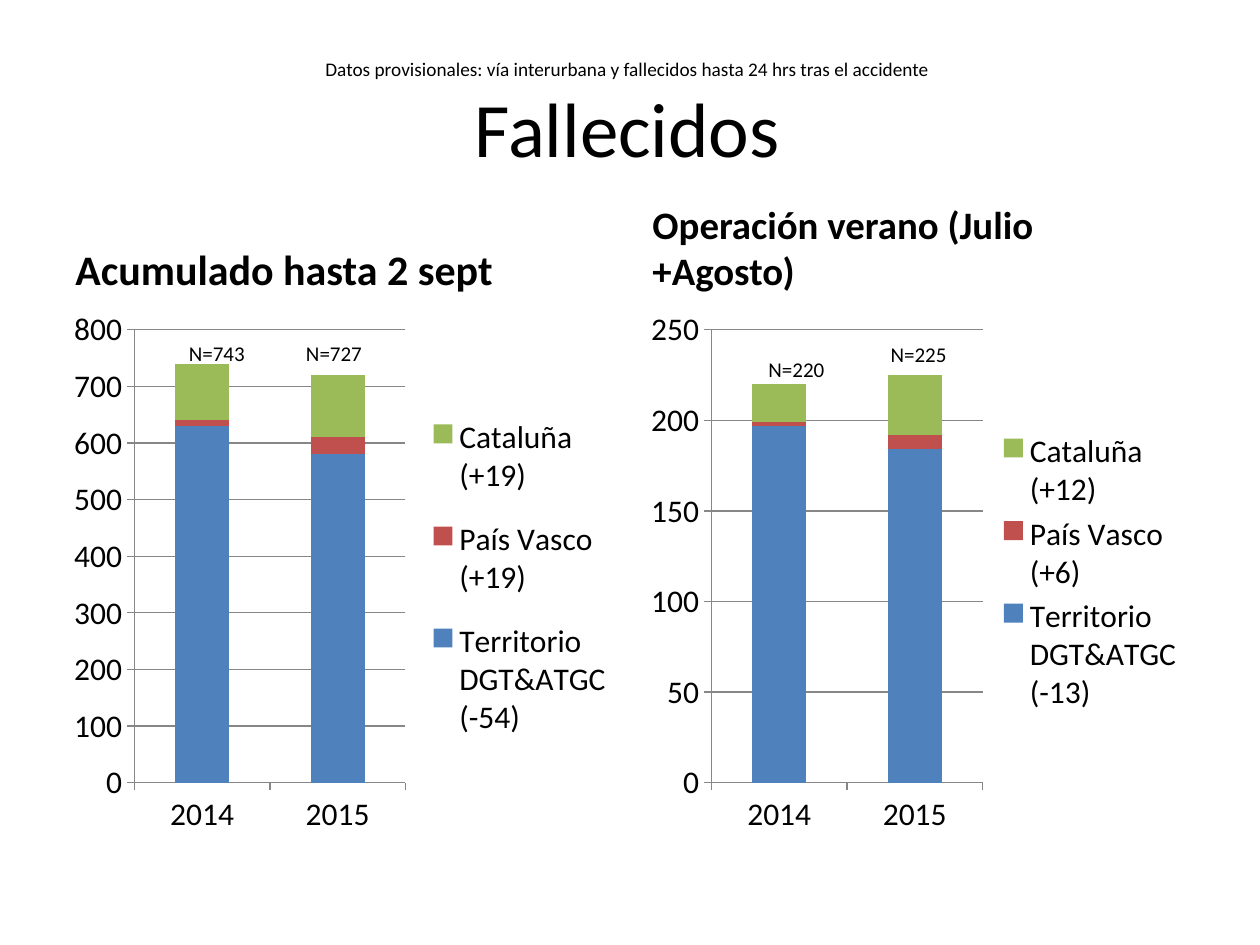
from lxml import etree
from pptx import Presentation
from pptx.chart.data import CategoryChartData
from pptx.dml.color import RGBColor
from pptx.enum.chart import XL_CHART_TYPE, XL_LEGEND_POSITION, XL_TICK_MARK
from pptx.enum.text import MSO_ANCHOR, PP_ALIGN
from pptx.oxml.ns import qn
from pptx.util import Inches, Pt

FONT = "Calibri"
BLACK = "000000"
GRID_GRAY = "878787"
SERIES_COLORS = ["4F81BD", "C0504D", "9BBB59"]
YEARS = ["2014", "2015"]
SUBTITLE = "Datos provisionales: vía interurbana y fallecidos hasta 24 hrs tras el accidente"
TITLE = "Fallecidos"
PANELS = [
    {
        "left": 0.5,
        "heading": "Acumulado hasta 2 sept",
        "heading_size": 24,
        "maximum": 800,
        "step": 100,
        "series": [
            ("Territorio DGT&ATGC (-54)", (630, 580)),
            ("País Vasco (+19)", (10, 30)),
            ("Cataluña (+19)", (100, 110)),
        ],
        "totals": [("N=743", 1.4, 2.65, 0.85, True), ("N=727", 2.33, 2.65, 0.65, False)],
        "legend_layout": {"x": 0.65, "y": 0.17, "w": 0.34, "h": 0.68},
    },
    {
        "left": 5.08,
        "heading": "Operación verano (Julio +Agosto)",
        "heading_size": 22.2,
        "maximum": 250,
        "step": 50,
        "series": [
            ("Territorio DGT&ATGC (-13)", (197, 184)),
            ("País Vasco (+6)", (2, 8)),
            ("Cataluña (+12)", (21, 33)),
        ],
        "totals": [("N=220", 6, 2.78, 0.65, False), ("N=225", 6.97, 2.66, 0.65, False)],
        "legend_layout": None,
    },
]
PANEL_WIDTH = 4.42
HEADING_TOP, HEADING_HEIGHT = 1.68, 0.7
CHART_HEIGHT = 4.32


def color(value):
    return RGBColor.from_string(value)


def style_font(font, size, bold=False):
    font.name = FONT
    font.size = Pt(size)
    font.bold = bold
    font.color.rgb = color(BLACK)


def add_run(paragraph, text, size, bold=False):
    run = paragraph.add_run()
    run.text = text
    style_font(run.font, size, bold)


def add_box(slide, left, top, width, height, anchor, wrap=True):
    shape = slide.shapes.add_textbox(Inches(left), Inches(top), Inches(width), Inches(height))
    frame = shape.text_frame
    frame.word_wrap = wrap
    frame.vertical_anchor = anchor
    return frame.paragraphs[0]


def add_title(slide):
    paragraph = add_box(slide, 0.48, 0.29, 9, 1.25, MSO_ANCHOR.MIDDLE)
    paragraph.alignment = PP_ALIGN.CENTER
    add_run(paragraph, SUBTITLE, 11)
    paragraph.add_line_break()
    add_run(paragraph, TITLE, 44)


def place_legend(chart, fractions):
    legend = chart.element.find(".//" + qn("c:legend"))
    layout = legend.find(qn("c:layout"))
    if layout is None:
        layout = etree.Element(qn("c:layout"))
        legend.find(qn("c:legendPos")).addnext(layout)
    manual = etree.SubElement(layout, qn("c:manualLayout"))
    for tag in ("xMode", "yMode"):
        etree.SubElement(manual, qn("c:" + tag)).set("val", "edge")
    for tag, fraction in fractions.items():
        etree.SubElement(manual, qn("c:" + tag)).set("val", str(fraction))


def add_stacked_chart(slide, panel):
    data = CategoryChartData()
    data.categories = YEARS
    for name, values in panel["series"]:
        data.add_series(name, values)
    chart = slide.shapes.add_chart(
        XL_CHART_TYPE.COLUMN_STACKED,
        Inches(panel["left"]), Inches(HEADING_TOP + HEADING_HEIGHT),
        Inches(PANEL_WIDTH), Inches(CHART_HEIGHT), data,
    ).chart
    style_font(chart.font, 18)
    chart.has_title = False
    chart.has_legend = True
    chart.legend.position = XL_LEGEND_POSITION.RIGHT
    chart.legend.include_in_layout = False
    if panel["legend_layout"]:
        place_legend(chart, panel["legend_layout"])

    plot = chart.plots[0]
    plot.gap_width = 150
    plot.overlap = 100
    plot.vary_by_categories = False
    for series, fill_color in zip(plot.series, SERIES_COLORS):
        series.format.fill.solid()
        series.format.fill.fore_color.rgb = color(fill_color)

    value_axis = chart.value_axis
    value_axis.minimum_scale = 0
    value_axis.maximum_scale = panel["maximum"]
    value_axis.major_unit = panel["step"]
    value_axis.has_major_gridlines = True
    for axis in (chart.category_axis, value_axis):
        axis.major_tick_mark = XL_TICK_MARK.OUTSIDE
        axis.minor_tick_mark = XL_TICK_MARK.NONE
    for part in (chart.category_axis, value_axis, value_axis.major_gridlines):
        part.format.line.color.rgb = color(GRID_GRAY)
        part.format.line.width = Pt(0.75)


def add_panel(slide, panel):
    heading = add_box(slide, panel["left"], HEADING_TOP, PANEL_WIDTH, HEADING_HEIGHT, MSO_ANCHOR.BOTTOM)
    add_run(heading, panel["heading"], panel["heading_size"], True)
    add_stacked_chart(slide, panel)
    for text, left, top, width, wrap in panel["totals"]:
        label = add_box(slide, left, top, width, 0.3, MSO_ANCHOR.TOP, wrap)
        add_run(label, text, 12)


def main():
    presentation = Presentation()
    presentation.slide_width = Inches(10)
    presentation.slide_height = Inches(7.5)
    slide = presentation.slides.add_slide(presentation.slide_layouts[6])
    add_title(slide)
    for panel in PANELS:
        add_panel(slide, panel)
    presentation.save("out.pptx")


if __name__ == "__main__":
    main()
